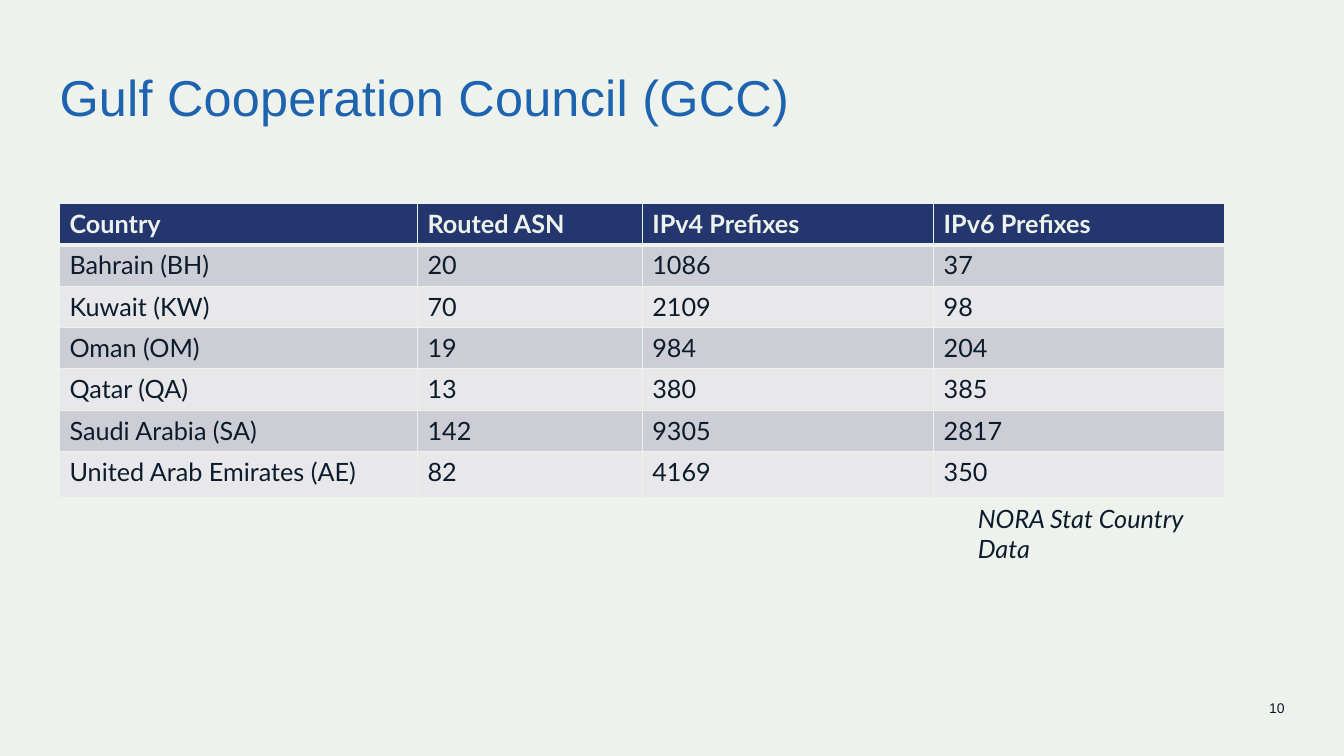
from lxml import etree
from pptx import Presentation
from pptx.dml.color import RGBColor
from pptx.enum.text import PP_ALIGN
from pptx.oxml.ns import qn
from pptx.util import Inches, Pt

LEFT, RIGHT = PP_ALIGN.LEFT, PP_ALIGN.RIGHT

# Content
TITLE = "Gulf Cooperation Council (GCC)"
SOURCE = "NORA Stat Country Data"
PAGE = "10"
ROWS = [
    ("Country", "Routed ASN", "IPv4 Prefixes", "IPv6 Prefixes"),
    ("Bahrain (BH)", "20", "1086", "37"),
    ("Kuwait (KW)", "70", "2109", "98"),
    ("Oman (OM)", "19", "984", "204"),
    ("Qatar (QA)", "13", "380", "385"),
    ("Saudi Arabia (SA)", "142", "9305", "2817"),
    ("United Arab Emirates (AE)", "82", "4169", "350"),
]

# Colours and layout, in inches
PAPER, INK, BLUE, NAVY = "EEF2EC", "0C1C2C", "1D63AF", "24366E"
BANDS = ("CDCED5", "E8E8EB")
SLIDE_W, SLIDE_H = 13.33, 7.5
MARGIN = 0.59
TABLE_TOP = 2.02
COLUMNS = (3.55, 2.23, 2.89, 2.89)
ROW_H, LAST_ROW_H = 0.41, 0.46
TABLE_H = ROW_H * (len(ROWS) - 1) + LAST_ROW_H


def rgb(value):
    return RGBColor.from_string(value)


def style(paragraph, font, size, color, bold=False, italic=False):
    paragraph.font.name = font
    paragraph.font.size = Pt(size)
    paragraph.font.color.rgb = rgb(color)
    paragraph.font.bold = bold
    paragraph.font.italic = italic


def add_text(slide, text, left, top, width, height, font, size, color,
             align=LEFT, inset=0.0, italic=False):
    frame = slide.shapes.add_textbox(*map(Inches, (left, top, width, height))).text_frame
    frame.word_wrap = True
    frame.margin_left = frame.margin_right = Inches(inset)
    frame.margin_top = frame.margin_bottom = Inches(inset / 2)
    paragraph = frame.paragraphs[0]
    paragraph.text = text
    paragraph.alignment = align
    style(paragraph, font, size, color, italic=italic)
    return paragraph


def add_borders(cell, top, bottom):
    properties = cell._tc.get_or_add_tcPr()
    for side, points in (("L", 1), ("R", 1), ("T", top), ("B", bottom)):
        line = etree.SubElement(properties, qn(f"a:ln{side}"), w=str(Pt(points)))
        fill = etree.SubElement(line, qn("a:solidFill"))
        etree.SubElement(fill, qn("a:srgbClr"), val=PAPER)


def add_country_table(slide):
    table = slide.shapes.add_table(
        len(ROWS), len(COLUMNS), Inches(MARGIN), Inches(TABLE_TOP),
        Inches(sum(COLUMNS)), Inches(TABLE_H)).table
    for column, width in zip(table.columns, COLUMNS):
        column.width = Inches(width)
    for r, values in enumerate(ROWS):
        header = r == 0
        table.rows[r].height = Inches(LAST_ROW_H if r == len(ROWS) - 1 else ROW_H)
        for c, value in enumerate(values):
            cell = table.cell(r, c)
            cell.text = value
            style(cell.text_frame.paragraphs[0], "Lato", 18,
                  PAPER if header else INK, bold=header)
            # A thick rule parts the header from the body
            add_borders(cell, top=3 if r == 1 else 1, bottom=3 if header else 1)
            cell.fill.solid()
            cell.fill.fore_color.rgb = rgb(NAVY if header else BANDS[(r - 1) % 2])


def main():
    deck = Presentation()
    deck.slide_width, deck.slide_height = Inches(SLIDE_W), Inches(SLIDE_H)
    slide = deck.slides.add_slide(deck.slide_layouts[6])
    slide.background.fill.solid()
    slide.background.fill.fore_color.rgb = rgb(PAPER)

    # Title
    title = add_text(slide, TITLE, MARGIN, 0.62, SLIDE_W - 2 * MARGIN, 0.59,
                     "Arial", 36, BLUE)
    title.line_spacing = 1.06
    title.runs[0].font._element.set("spc", "20")

    # Table and its source
    add_country_table(slide)
    add_text(slide, SOURCE, 9.6, TABLE_TOP + TABLE_H, 2.75, 0.4,
             "Lato", 18, INK, inset=0.1, italic=True)

    # Page number
    add_text(slide, PAGE, SLIDE_W - MARGIN - 3, 6.94, 3, 0.19,
             "Arial", 10, INK, align=RIGHT)

    deck.save("out.pptx")


if __name__ == "__main__":
    main()
